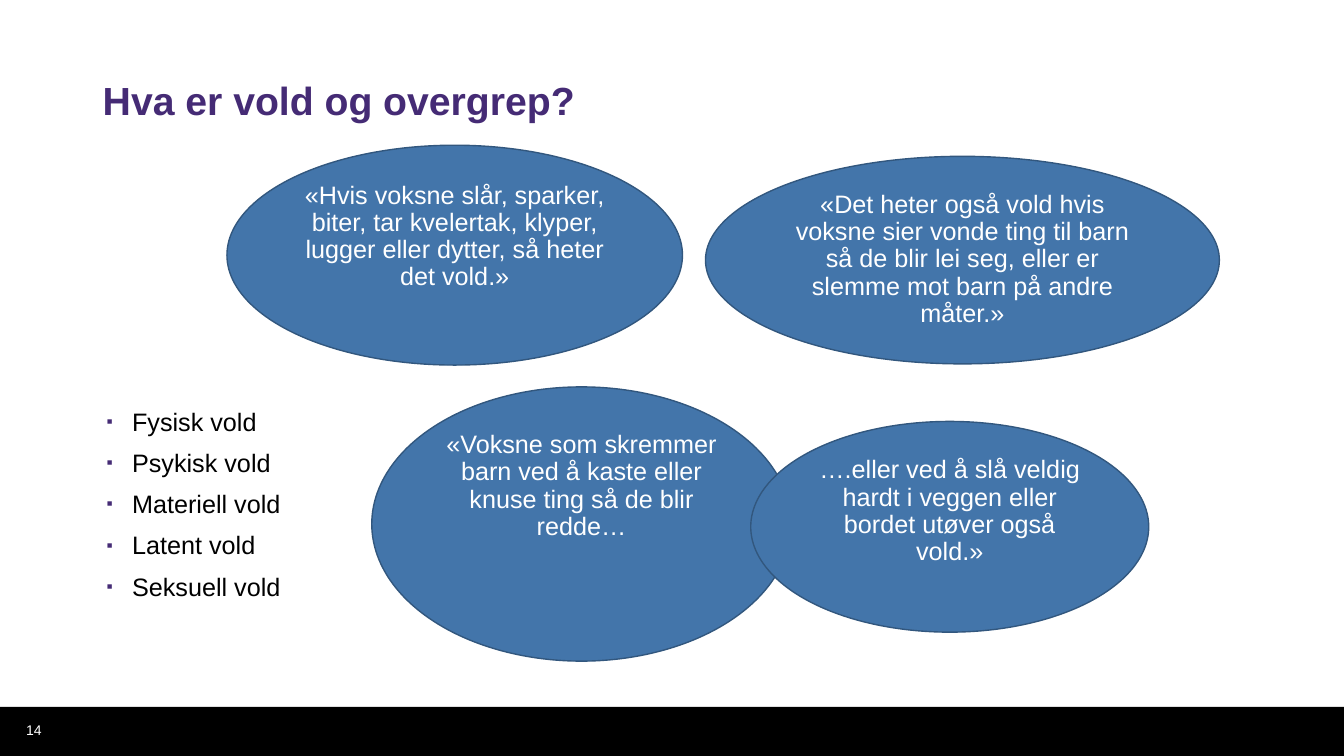
from lxml import etree
from pptx import Presentation
from pptx.dml.color import RGBColor
from pptx.enum.shapes import MSO_SHAPE
from pptx.enum.text import MSO_ANCHOR, PP_ALIGN
from pptx.oxml.ns import qn
from pptx.util import Cm, Pt

RECTANGLE, OVAL = MSO_SHAPE.RECTANGLE, MSO_SHAPE.OVAL
TOP, MIDDLE, BOTTOM = MSO_ANCHOR.TOP, MSO_ANCHOR.MIDDLE, MSO_ANCHOR.BOTTOM
LEFT, CENTER = PP_ALIGN.LEFT, PP_ALIGN.CENTER

BLACK = RGBColor(0x00, 0x00, 0x00)
WHITE = RGBColor(0xFF, 0xFF, 0xFF)
PURPLE = RGBColor(0x45, 0x2B, 0x75)
BLUE = RGBColor(0x43, 0x75, 0xAA)
DARK_BLUE = RGBColor(0x32, 0x57, 0x7E)

WIDTH, HEIGHT = 33.87, 19.05
BAR_HEIGHT = 1.24

QUOTES = [
    ((9.37, 9.75, 10.57, 6.91),
     "«Voksne som skremmer barn ved å kaste eller knuse ting så de blir redde…"),
    ((5.72, 3.66, 11.48, 5.54),
     "«Hvis voksne slår, sparker, biter, tar kvelertak, klyper, lugger eller "
     "dytter, så heter det vold.»"),
    ((18.92, 10.62, 10.03, 5.31),
     "….eller ved å slå veldig hardt i veggen eller bordet utøver også vold.»"),
    ((17.78, 3.94, 12.95, 5.23),
     "«Det heter også vold hvis voksne sier vonde ting til barn så de blir lei "
     "seg, eller er slemme mot barn på andre måter.»"),
]
KINDS = ["Fysisk vold", "Psykisk vold", "Materiell vold", "Latent vold", "Seksuell vold"]


class Page:
    """Draws styled elements on one slide."""

    font = "Arial"
    line_spacing = 0.9

    def __init__(self, deck):
        self.shapes = deck.slides.add_slide(deck.slide_layouts[6]).shapes

    def fill_text(self, shape, text, size, color, anchor=TOP, align=LEFT, bold=False):
        frame = shape.text_frame
        frame.word_wrap = True
        frame.vertical_anchor = anchor
        frame.text = text
        for paragraph in frame.paragraphs:
            paragraph.alignment = align
            paragraph.line_spacing = self.line_spacing
            for span in paragraph.runs:
                span.font.name = self.font
                span.font.size = Pt(size)
                span.font.bold = bold
                span.font.color.rgb = color
        return frame

    def shape(self, kind, place, fill, line=None):
        shape = self.shapes.add_shape(kind, *map(Cm, place))
        shape.shadow.inherit = False
        shape.fill.solid()
        shape.fill.fore_color.rgb = fill
        if line is None:
            shape.line.fill.background()
        else:
            shape.line.color.rgb = line
            shape.line.width = Pt(1)
        return shape

    def quote(self, place, text):
        oval = self.shape(OVAL, place, BLUE, DARK_BLUE)
        self.fill_text(oval, text, 18, WHITE, align=CENTER)

    def text(self, place, text, size, color, **style):
        box = self.shapes.add_textbox(*map(Cm, place))
        return self.fill_text(box, text, size, color, **style)

    def bullets(self, place, items):
        frame = self.text(place, "\n".join(items), 18, BLACK)
        for index, paragraph in enumerate(frame.paragraphs):
            paragraph.space_before = Pt(10 if index else 0)
            properties = paragraph._p.get_or_add_pPr()
            properties.set("marL", str(Cm(0.64)))
            properties.set("indent", str(-Cm(0.64)))
            color = etree.SubElement(properties, qn("a:buClr"))
            etree.SubElement(color, qn("a:srgbClr"), val=str(PURPLE))
            etree.SubElement(properties, qn("a:buSzPct"), val="70000")
            etree.SubElement(properties, qn("a:buFont"), typeface=self.font)
            etree.SubElement(properties, qn("a:buChar"), char="▪")


def main():
    deck = Presentation()
    deck.slide_width, deck.slide_height = Cm(WIDTH), Cm(HEIGHT)
    page = Page(deck)
    page.shape(RECTANGLE, (0, HEIGHT - BAR_HEIGHT, WIDTH, BAR_HEIGHT), BLACK)
    for place, text in QUOTES:
        page.quote(place, text)
    page.text((2.34, 1.37, 29.21, 1.88), "Hva er vold og overgrep?", 28, PURPLE,
              anchor=BOTTOM, bold=True)
    page.bullets((2.44, 10.19, 5.92, 6.25), KINDS)
    page.text((0.41, 17.91, 1.32, 1.02), "14", 10, WHITE, anchor=MIDDLE)
    deck.save("out.pptx")


if __name__ == "__main__":
    main()
